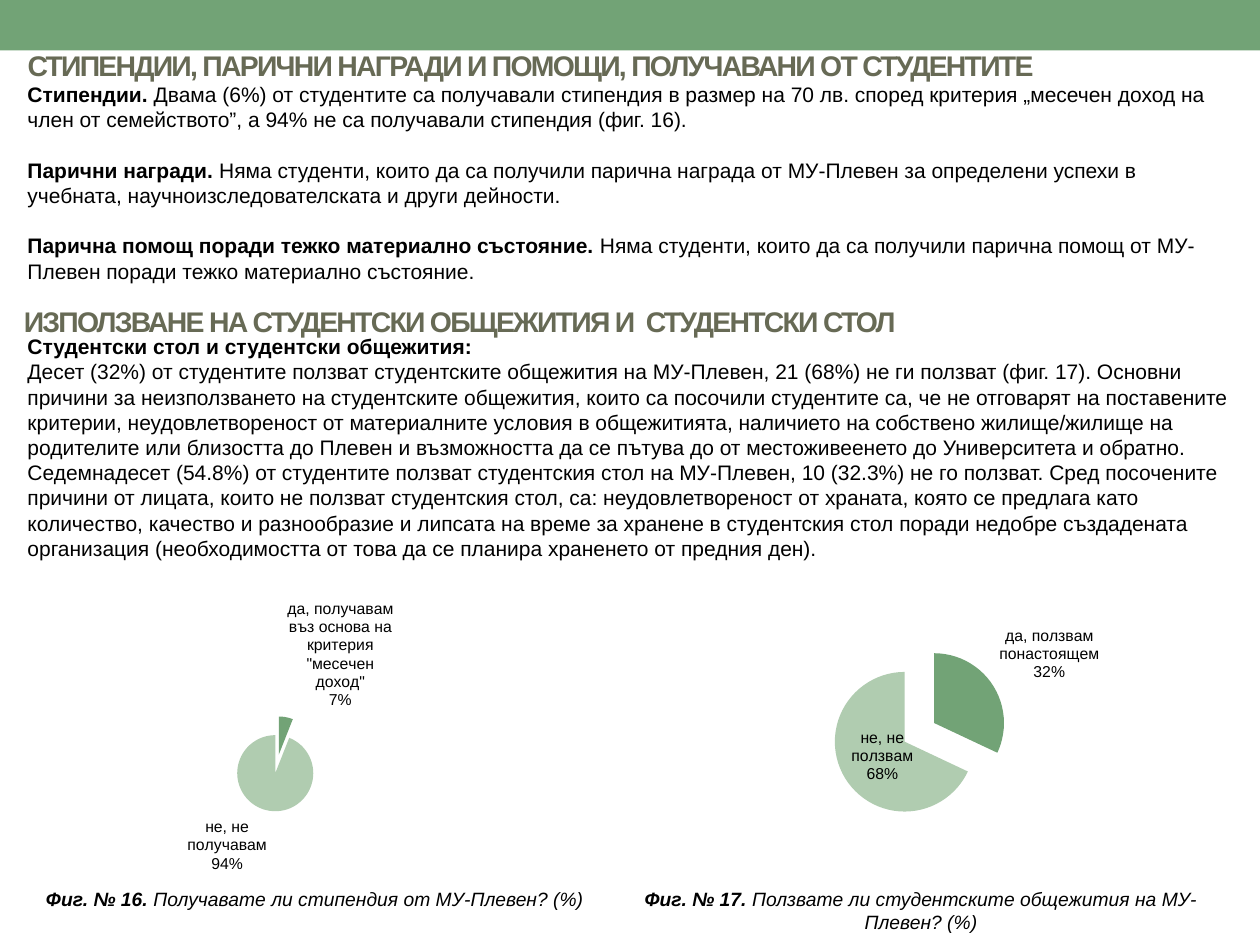
from pptx import Presentation
from pptx.chart.data import CategoryChartData
from pptx.dml.color import RGBColor
from pptx.enum import chart as ch, shapes, text
from pptx.oxml import parse_xml
from pptx.oxml.ns import nsdecls
from pptx.util import Inches, Pt

GREEN = RGBColor(0x72, 0xA3, 0x76)
LIGHT_GREEN = RGBColor(0xB0, 0xCC, 0xB0)
OLIVE = RGBColor(0x67, 0x6A, 0x55)
BLACK = RGBColor(0, 0, 0)
FONT = "Arial"
LINE = 14.4

BODY = [
    ("Стипендии. ",
     "Двама (6%) от студентите са получавали стипендия в размер на 70 лв. според критерия "
     "„месечен доход на член от семейството”, а 94% не са получавали стипендия (фиг. 16).", 1),
    ("Парични награди. ",
     "Няма студенти, които да са получили парична награда от МУ-Плевен за определени успехи "
     "в учебната, научноизследователската и други дейности.", 1),
    ("Парична помощ поради тежко материално състояние. ",
     "Няма студенти, които да са получили парична помощ от МУ-Плевен поради тежко "
     "материално състояние.", 2),
    ("Студентски стол и студентски общежития:", "", 0),
    ("",
     "Десет (32%) от студентите ползват студентските общежития на МУ-Плевен, 21 (68%) не ги "
     "ползват (фиг. 17). Основни причини за неизползването на студентските общежития, които "
     "са посочили студентите са, че не отговарят на поставените критерии, неудовлетвореност "
     "от материалните условия в общежитията, наличието на собствено жилище/жилище на "
     "родителите или близостта до Плевен и възможността да се пътува до от местоживеенето "
     "до Университета и обратно.", 0),
    ("",
     "Седемнадесет (54.8%) от студентите ползват студентския стол на МУ-Плевен, 10 (32.3%) "
     "не го ползват. Сред посочените причини от лицата, които не ползват студентския стол, "
     "са: неудовлетвореност от храната, която се предлага като количество, качество и "
     "разнообразие и липсата на време за хранене в студентския стол поради недобре "
     "създадената организация (необходимостта от това да се планира храненето от предния "
     "ден).", 0),
]


def style_font(font, size, color=BLACK, bold=False, italic=False):
    font.name = FONT
    font.size = Pt(size)
    font.color.rgb = color
    font.bold = bold
    font.italic = italic


def add_run(p, content, size, color=BLACK, bold=False, italic=False):
    r = p.add_run()
    r.text = content
    style_font(r.font, size, color, bold, italic)
    return r


def add_text_frame(s, x, y, w, h):
    tf = s.shapes.add_textbox(Inches(x), Inches(y), Inches(w), Inches(h)).text_frame
    tf.word_wrap = True
    return tf


def add_band(s):
    sp = s.shapes.add_shape(shapes.MSO_SHAPE.RECTANGLE, 0, 0, Inches(10), Inches(0.4))
    sp.shadow.inherit = False
    sp.fill.solid()
    sp.fill.fore_color.rgb = GREEN
    sp.line.fill.background()


def add_heading(s, x, y, content):
    tf = add_text_frame(s, x, y, 9.69, 0.31)
    tf.vertical_anchor = text.MSO_ANCHOR.MIDDLE
    r = add_run(tf.paragraphs[0], content, 16.2, OLIVE, bold=True)
    r.font._element.set("spc", "-100")


def add_body(s):
    tf = add_text_frame(s, 0.12, 0.6, 9.76, 3.94)
    for i, (lead, content, gap_lines) in enumerate(BODY):
        p = tf.add_paragraph() if i else tf.paragraphs[0]
        p.space_after = Pt(gap_lines * LINE)
        if lead:
            add_run(p, lead, 12, bold=True)
        if content:
            add_run(p, content, 12)


def add_caption(s, x, h, label, question):
    p = add_text_frame(s, x, 6.99, 5, h).paragraphs[0]
    p.alignment = text.PP_ALIGN.CENTER
    add_run(p, label, 11, bold=True, italic=True)
    add_run(p, question, 11, italic=True)


def place_plot(chart, w, h, center_x, center_y, size):
    area = chart._chartSpace.chart.plotArea
    for old in area.findall("{*}layout"):
        area.remove(old)
    values = {"x": (center_x - size / 2) / w, "y": (center_y - size / 2) / h,
              "w": size / w, "h": size / h}
    parts = "".join(f'<c:{k}Mode val="edge"/>' for k in "xy")
    parts += "".join(f'<c:{k} val="{v:.2f}"/>' for k, v in values.items())
    area.insert(0, parse_xml(
        f'<c:layout {nsdecls("c")}><c:manualLayout><c:layoutTarget val="inner"/>'
        f'{parts}</c:manualLayout></c:layout>'))


def add_pie(s, box, categories, values, plot):
    data = CategoryChartData()
    data.categories = categories
    data.add_series("Series 1", values)
    chart = s.shapes.add_chart(ch.XL_CHART_TYPE.PIE, *map(Inches, box), data).chart
    chart.has_legend = False
    chart.has_title = False
    style_font(chart.font, 18)
    pie = chart.plots[0]
    pie.vary_by_categories = True
    series = pie.series[0]
    series._element.get_or_add_tx().addnext(
        parse_xml(f'<c:explosion {nsdecls("c")} val="25"/>'))
    for i, color in enumerate((GREEN, LIGHT_GREEN)):
        fill = series.points[i].format.fill
        fill.solid()
        fill.fore_color.rgb = color
    labels = series.data_labels
    labels.show_category_name = True
    labels.show_percentage = True
    labels.show_value = False
    labels.number_format = "0%"
    labels.number_format_is_linked = False
    labels.position = ch.XL_LABEL_POSITION.BEST_FIT
    style_font(labels.font, 9)
    labels._element.find("{*}showBubbleSize").addnext(
        parse_xml(f'<c:separator {nsdecls("c")}>\n</c:separator>'))
    place_plot(chart, box[2], box[3], *plot)
    return series


def label_point(series, index, lines):
    label = series.points[index].data_label
    tf = label.text_frame
    for i, line in enumerate(lines):
        p = tf.add_paragraph() if i else tf.paragraphs[0]
        add_run(p, line, 9)
    label.position = ch.XL_LABEL_POSITION.OUTSIDE_END


def main():
    prs = Presentation()
    prs.slide_width, prs.slide_height = Inches(10), Inches(7.5)
    s = prs.slides.add_slide(prs.slide_layouts[6])
    add_band(s)
    add_heading(s, 0.12, 0.36, "СТИПЕНДИИ, ПАРИЧНИ НАГРАДИ И ПОМОЩИ, ПОЛУЧАВАНИ ОТ СТУДЕНТИТЕ")
    add_body(s)
    add_heading(s, 0.09, 2.39, "ИЗПОЛЗВАНЕ НА СТУДЕНТСКИ ОБЩЕЖИТИЯ И  СТУДЕНТСКИ СТОЛ")
    grant = 'да, получавам въз основа на критерия "месечен доход"'
    grants = add_pie(s, (0.09, 4.52, 4.44, 2.53), (grant, "не, не получавам"),
                     (6, 94), (2.12, 1.54, 0.75))
    label_point(grants, 0, (grant, "7%"))
    add_pie(s, (5.08, 4.46, 4.62, 2.44), ("да, ползвам понастоящем", "не, не ползвам"),
            (32, 68), (2.23, 1.36, 1.4))
    add_caption(s, 0, 0.29, "Фиг. № 16. ", "Получавате ли стипендия от МУ-Плевен? (%)")
    add_caption(s, 4.81, 0.47, "Фиг. № 17. ",
                "Ползвате ли студентските общежития на МУ-Плевен? (%)")


    prs.save("out.pptx")


if __name__ == "__main__":
    main()
